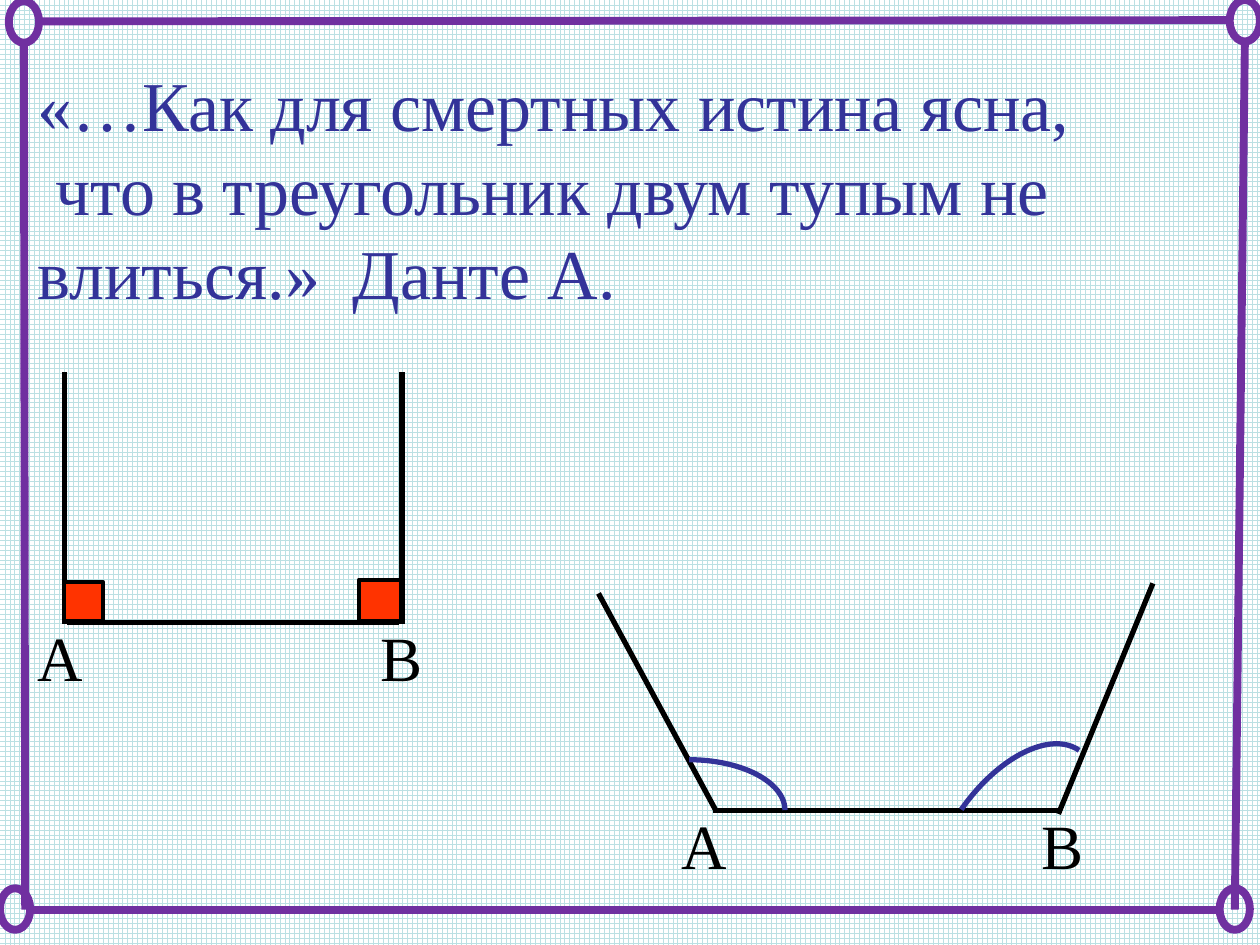
from pptx import Presentation
from pptx.dml.color import RGBColor
from pptx.enum.dml import MSO_PATTERN
from pptx.enum.shapes import MSO_CONNECTOR, MSO_SHAPE
from pptx.oxml.ns import qn
from pptx.util import Inches, Pt
from lxml.etree import SubElement

FONT = "Times New Roman"
BLACK, BLUE, PURPLE, RED = "000000", "333399", "7030A0", "FF3300"
QUOTE = ["«…Как для смертных истина ясна,",
         "что в треугольник двум тупым не влиться.»\tДанте А."]
QUOTE_INDENT, AUTHOR_TAB = 0.14, 7.08

ANGLE_SIDES = [
    (0.53, 4.94, 3.17, 4.94), (0.51, 4.95, 0.51, 2.95), (3.19, 4.95, 3.19, 2.95),
    (5.66, 6.43, 8.43, 6.43), (5.68, 6.43, 4.75, 4.71), (8.4, 6.46, 9.15, 4.63),
]
RIGHT_ANGLES = [(0.51, 4.62, 0.31), (2.85, 4.6, 0.33)]
OBTUSE_ANGLES = [(5.47, 6.43, 0.76, 0.4, 0), (8.04, 6.71, 0.92, 0.5, 304.8)]
VERTICES = [("A", 0.2, 4.86, 0.58), ("B", 2.92, 4.86, 0.58),
            ("A", 5.31, 6.35, 0.61), ("B", 8.17, 6.35, 0.61)]
FRAME_SIDES = [(0.31, 0.17, 9.76, 0.16), (0.19, 0.34, 0.2, 7.22),
               (9.88, 0.33, 9.8, 7.22), (0.24, 7.22, 9.68, 7.22)]
FRAME_RINGS = [(0.07, 0.01), (9.76, 0), (0, 7.05), (9.68, 7.05)]


def color(value):
    return RGBColor.from_string(value)


def add_line(slide, ends, line_color, width):
    connector = slide.shapes.add_connector(MSO_CONNECTOR.STRAIGHT, *map(Inches, ends))
    connector.line.color.rgb = color(line_color)
    connector.line.width = Pt(width)
    SubElement(connector._element.spPr, qn("a:effectLst"))


def add_outline(slide, kind, box, line_color, width, fill=None):
    shape = slide.shapes.add_shape(kind, *map(Inches, box))
    shape.shadow.inherit = False
    shape.line.color.rgb = color(line_color)
    shape.line.width = Pt(width)
    if fill:
        shape.fill.solid()
        shape.fill.fore_color.rgb = color(fill)
    else:
        shape.fill.background()
    return shape


def add_text(slide, box, lines, size, text_color):
    frame = slide.shapes.add_textbox(*map(Inches, box)).text_frame
    frame.word_wrap = True
    for index, line in enumerate(lines):
        paragraph = frame.paragraphs[0] if index == 0 else frame.add_paragraph()
        run = paragraph.add_run()
        run.text = line
        run.font.name = FONT
        run.font.size = Pt(size)
        run.font.color.rgb = color(text_color)
    return frame


def add_quote(slide):
    frame = add_text(slide, (0.2, 0.44, 9.8, 2.12), QUOTE, 40, BLUE)
    properties = frame.paragraphs[1]._p.get_or_add_pPr()
    properties.set("marL", "0")
    properties.set("indent", str(Inches(QUOTE_INDENT)))
    tabs = SubElement(properties, qn("a:tabLst"))
    SubElement(tabs, qn("a:tab"), pos=str(Inches(AUTHOR_TAB)), algn="l")


def main():
    presentation = Presentation()
    presentation.slide_width, presentation.slide_height = Inches(10), Inches(7.5)
    slide = presentation.slides.add_slide(presentation.slide_layouts[6])
    background = slide.background.fill
    background.patterned()
    background.pattern = MSO_PATTERN.LARGE_GRID
    background.fore_color.rgb = color("BBE0E3")
    background.back_color.rgb = color("FFFFFF")

    for ends in ANGLE_SIDES:
        add_line(slide, ends, BLACK, 3)
    for left, top, side in RIGHT_ANGLES:
        add_outline(slide, MSO_SHAPE.RECTANGLE, (left, top, side, side), BLACK, 2.25, RED)
    for x, y, across, up, rotation in OBTUSE_ANGLES:
        box = (x - across, y - up, 2 * across, 2 * up)
        add_outline(slide, MSO_SHAPE.ARC, box, BLUE, 3).rotation = rotation
    for letter, left, top, width in VERTICES:
        add_text(slide, (left, top, width, 0.7), [letter], 36, BLACK)
    add_quote(slide)
    for ends in FRAME_SIDES:
        add_line(slide, ends, PURPLE, 4.5)
    for left, top in FRAME_RINGS:
        add_outline(slide, MSO_SHAPE.OVAL, (left, top, 0.24, 0.33), PURPLE, 4.5)
    presentation.save("out.pptx")


if __name__ == "__main__":
    main()
